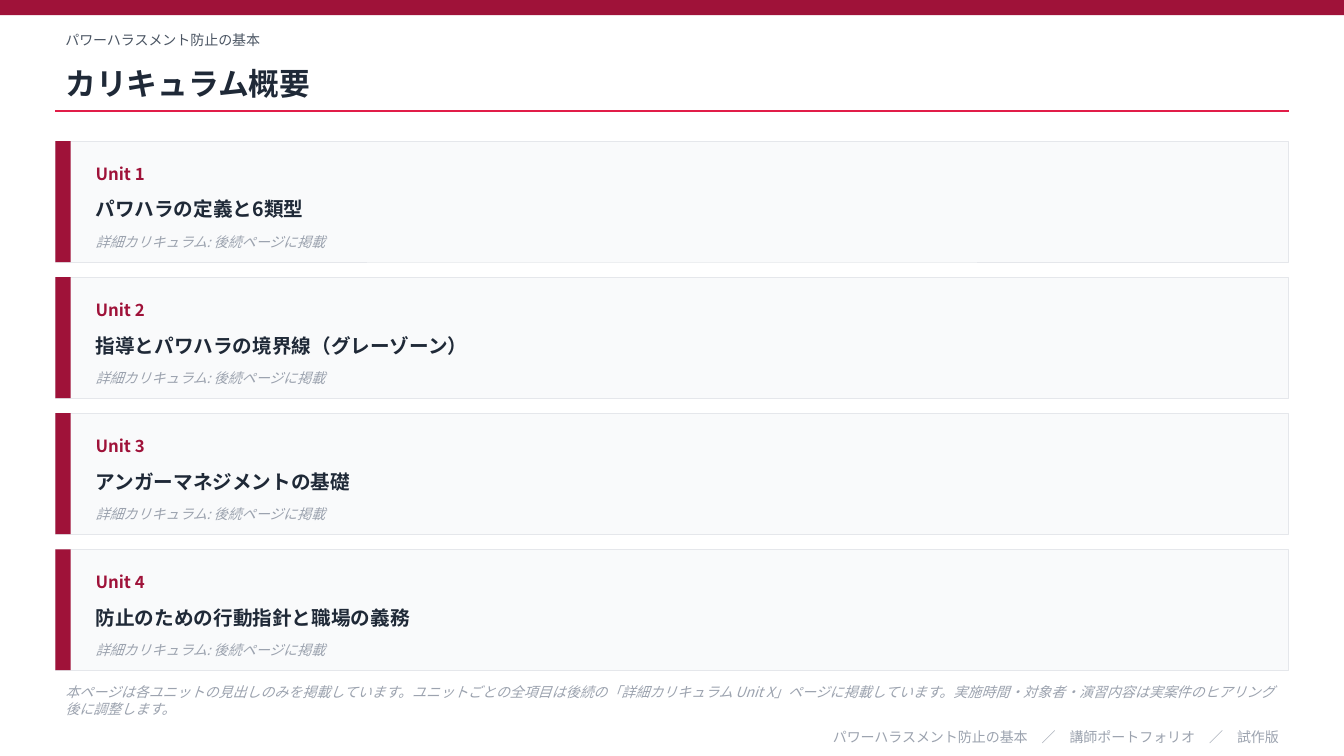
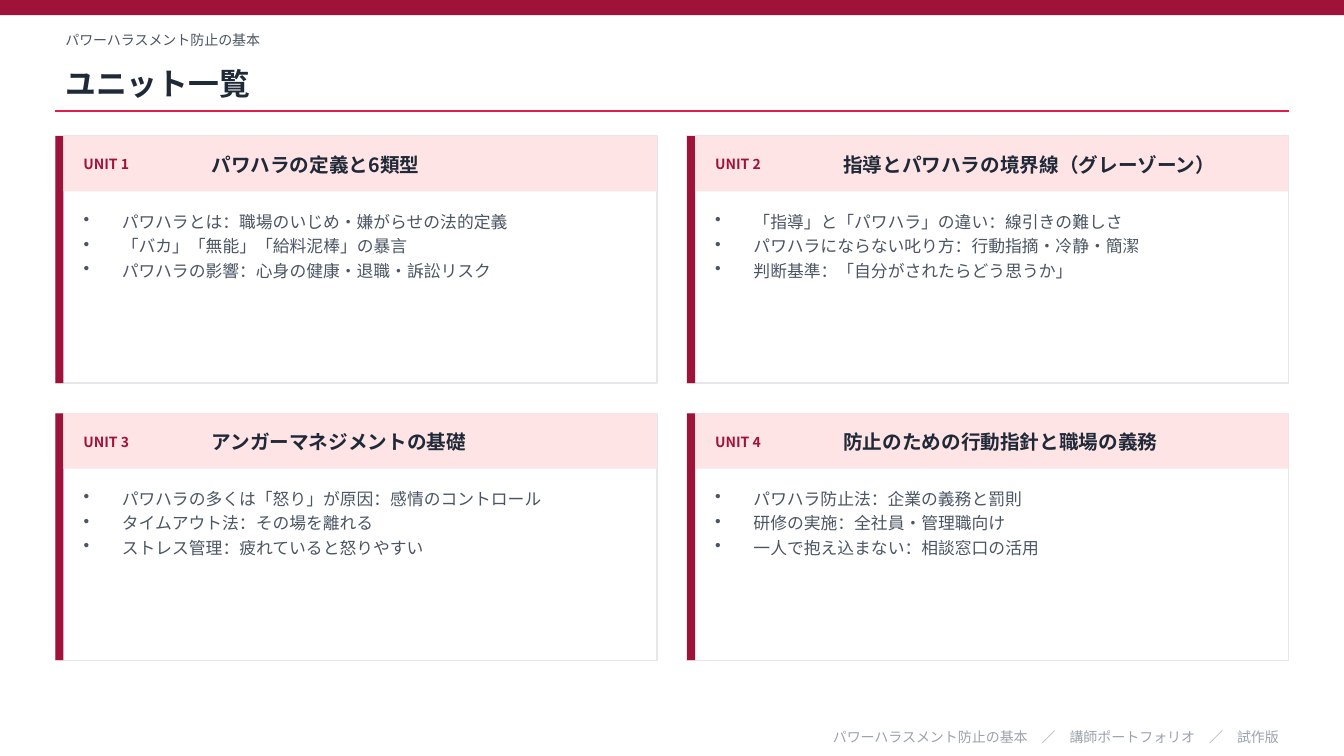
from dataclasses import dataclass
from lxml import etree
from pptx import Presentation
from pptx.dml.color import RGBColor
from pptx.enum.shapes import MSO_CONNECTOR, MSO_SHAPE
from pptx.enum.text import MSO_ANCHOR, PP_ALIGN
from pptx.oxml.ns import qn
from pptx.util import Inches, Pt

RECT = MSO_SHAPE.RECTANGLE
STRAIGHT = MSO_CONNECTOR.STRAIGHT
TOP, MIDDLE = MSO_ANCHOR.TOP, MSO_ANCHOR.MIDDLE
LEFT, RIGHT = PP_ALIGN.LEFT, PP_ALIGN.RIGHT


@dataclass(frozen=True)
class Theme:
    font: str = "Noto Sans CJK JP"
    brand: str = "9F1239"
    rule: str = "E11D48"
    tint: str = "FFE4E6"
    ink: str = "1F2937"
    body: str = "4B5563"
    muted: str = "9CA3AF"
    border: str = "E5E7EB"
    panel: str = "F9FAFB"
    white: str = "FFFFFF"
    title_size: int = 22
    heading_size: int = 14
    body_size: int = 12
    small_size: int = 10


T = Theme()

COURSE = "パワーハラスメント防止の基本"
FOOTER = "　／　".join([COURSE, "講師ポートフォリオ", "試作版"])
OVERVIEW_TITLE = "カリキュラム概要"
LIST_TITLE = "ユニット一覧"
DETAIL = "詳細カリキュラム: 後続ページに掲載"
NOTE = (
    "本ページは各ユニットの見出しのみを掲載しています。"
    "ユニットごとの全項目は後続の「詳細カリキュラム Unit X」ページに掲載しています。"
    "実施時間・対象者・演習内容は実案件のヒアリング後に調整します。"
)
UNITS = [
    ("パワハラの定義と6類型", [
        "パワハラとは：職場のいじめ・嫌がらせの法的定義",
        "「バカ」「無能」「給料泥棒」の暴言",
        "パワハラの影響：心身の健康・退職・訴訟リスク",
    ]),
    ("指導とパワハラの境界線（グレーゾーン）", [
        "「指導」と「パワハラ」の違い：線引きの難しさ",
        "パワハラにならない叱り方：行動指摘・冷静・簡潔",
        "判断基準：「自分がされたらどう思うか」",
    ]),
    ("アンガーマネジメントの基礎", [
        "パワハラの多くは「怒り」が原因：感情のコントロール",
        "タイムアウト法：その場を離れる",
        "ストレス管理：疲れていると怒りやすい",
    ]),
    ("防止のための行動指針と職場の義務", [
        "パワハラ防止法：企業の義務と罰則",
        "研修の実施：全社員・管理職向け",
        "一人で抱え込まない：相談窓口の活用",
    ]),
]

SLIDE_W, SLIDE_H = 13.33, 7.5
MARGIN = 0.55
CONTENT_W = 12.23


def add_rect(s, x, y, w, h, fill, line=None, weight=1):
    sp = s.shapes.add_shape(RECT, Inches(x), Inches(y), Inches(w), Inches(h))
    sp.shadow.inherit = False
    sp.fill.solid()
    sp.fill.fore_color.rgb = RGBColor.from_string(fill)
    if line:
        sp.line.color.rgb = RGBColor.from_string(line)
        sp.line.width = Pt(weight)
    else:
        sp.line.fill.background()


def add_bullet(p, indent=0.38):
    pPr = p._p.get_or_add_pPr()
    pPr.set("marL", str(Inches(indent)))
    pPr.set("indent", str(-Inches(indent)))
    etree.SubElement(pPr, qn("a:buChar")).set("char", "•")


def add_text(s, lines, x, y, w, h, size=T.small_size, color=T.muted, bold=False,
             italic=False, align=LEFT, anchor=MIDDLE, bullets=False, after=None):
    sp = s.shapes.add_textbox(Inches(x), Inches(y), Inches(w), Inches(h))
    tf = sp.text_frame
    tf.word_wrap = True
    tf.vertical_anchor = anchor
    for i, line in enumerate([lines] if isinstance(lines, str) else lines):
        p = tf.add_paragraph() if i else tf.paragraphs[0]
        p.alignment = align
        if bullets:
            add_bullet(p)
        if after is not None:
            p.space_after = Pt(after)
        r = p.add_run()
        r.text = line
        r.font.name = T.font
        r.font.size = Pt(size)
        r.font.bold = bold
        r.font.italic = italic
        r.font.color.rgb = RGBColor.from_string(color)
        ea = etree.Element(qn("a:ea"))
        ea.set("typeface", T.font)
        r.font._element.find(qn("a:latin")).addnext(ea)


def add_rule(s, x, y, w):
    c = s.shapes.add_connector(STRAIGHT, Inches(x), Inches(y), Inches(x + w), Inches(y))
    c.line.color.rgb = RGBColor.from_string(T.rule)
    c.line.width = Pt(1)
    etree.SubElement(c._element.spPr, qn("a:effectLst"))


def add_base(prs, title):
    s = prs.slides.add_slide(prs.slide_layouts[6])
    add_rect(s, 0, 0, SLIDE_W, 0.15, T.brand)
    add_text(s, COURSE, MARGIN, 0.25, CONTENT_W, 0.3, color=T.body)
    add_text(s, title, MARGIN, 0.55, CONTENT_W, 0.55,
             size=T.title_size, color=T.ink, bold=True)
    add_rule(s, MARGIN, 1.1, CONTENT_W)
    add_text(s, FOOTER, MARGIN, 7.2, CONTENT_W, 0.22, align=RIGHT)
    return s


def add_overview(prs):
    s = add_base(prs, OVERVIEW_TITLE)
    top, row_h, gap = 1.4, 1.2, 0.15
    text_x, text_w = MARGIN + 0.3, CONTENT_W - 0.5
    for i, (name, _) in enumerate(UNITS):
        y = top + i * (row_h + gap)
        add_rect(s, MARGIN, y, CONTENT_W, row_h, T.panel, line=T.border, weight=0.5)
        add_rect(s, MARGIN, y, 0.15, row_h, T.brand)
        add_text(s, f"Unit {i + 1}", text_x, y + 0.12, 1.5, 0.4,
                 size=T.body_size, color=T.brand, bold=True)
        add_text(s, name, text_x, y + 0.45, text_w, 0.45,
                 size=T.heading_size, color=T.ink, bold=True)
        add_text(s, DETAIL, text_x, y + 0.85, text_w, 0.3, italic=True)
    add_text(s, NOTE, MARGIN, 6.75, CONTENT_W, 0.4, italic=True)


def add_unit_list(prs):
    s = add_base(prs, LIST_TITLE)
    top, card_h, gap, cols = 1.35, 2.45, 0.3, 2
    bar_w, head_h, pad = 0.08, 0.55, 0.18
    card_w = (CONTENT_W - gap * (cols - 1)) / cols
    for i, (name, topics) in enumerate(UNITS):
        row, col = divmod(i, cols)
        x = MARGIN + col * (card_w + gap)
        y = top + row * (card_h + gap)
        add_rect(s, x, y, card_w, card_h, T.white, line=T.border)
        add_rect(s, x, y, bar_w, card_h, T.brand)
        add_rect(s, x + bar_w, y, card_w - bar_w, head_h, T.tint)
        add_text(s, f"UNIT {i + 1}", x + pad, y + 0.08, 1.2, 0.4,
                 color=T.brand, bold=True)
        add_text(s, name, x + 1.45, y + 0.08, card_w - 1.6, 0.4,
                 size=T.heading_size, color=T.ink, bold=True)
        add_text(s, topics, x + pad, y + 0.7, card_w - 2 * pad, 1.6,
                 size=T.body_size, color=T.body, anchor=TOP, bullets=True, after=3)


def main():
    prs = Presentation()
    prs.slide_width, prs.slide_height = Inches(SLIDE_W), Inches(SLIDE_H)
    add_overview(prs)
    add_unit_list(prs)
    prs.save("out.pptx")


if __name__ == "__main__":
    main()
